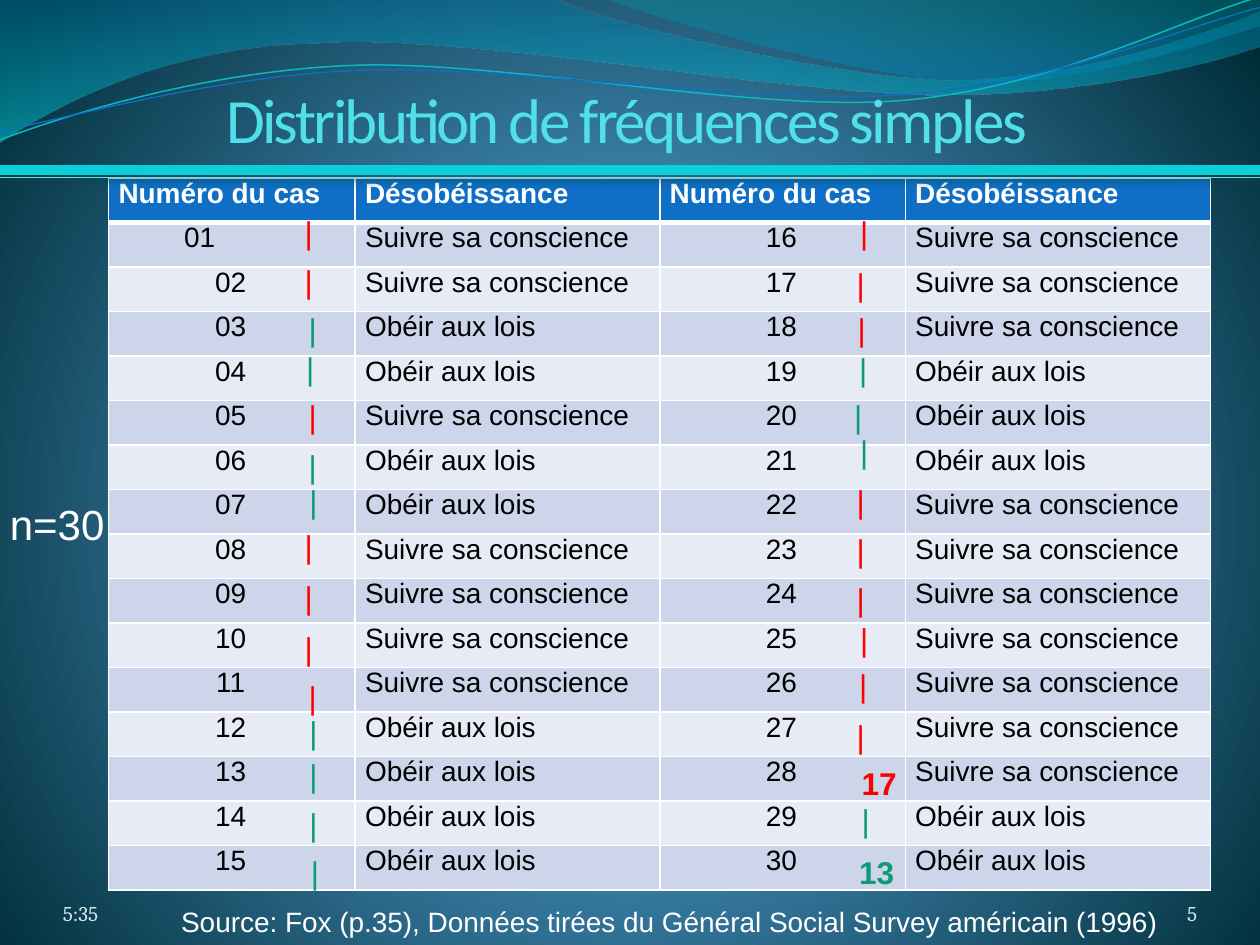
from math import cos, radians, sin
from typing import NamedTuple

from lxml.etree import SubElement
from pptx import Presentation
from pptx.dml.color import RGBColor
from pptx.enum.shapes import MSO_CONNECTOR
from pptx.enum.text import MSO_ANCHOR, MSO_AUTO_SIZE, PP_ALIGN
from pptx.oxml import parse_xml
from pptx.oxml.ns import nsdecls, qn
from pptx.util import Cm, Pt

WHITE = RGBColor(0xFF, 0xFF, 0xFF)
BLACK = RGBColor(0, 0, 0)
RED = RGBColor(0xFF, 0, 0)
GREEN = RGBColor(0x0C, 0x9B, 0x74)
BLUE = RGBColor(0x0F, 0x6F, 0xC6)
TEAL = RGBColor(0x0A, 0xB8, 0xBF)
CYAN = RGBColor(0x0B, 0xD0, 0xD9)
PALE_CYAN = RGBColor(0x77, 0xD9, 0xE8)
TITLE_CYAN = RGBColor(0x51, 0xE0, 0xEA)
FOOTER_GREY = RGBColor(0xD1, 0xEA, 0xEE)
SHADOW_TEAL = RGBColor(0x02, 0x4B, 0x4E)
DARK_BAND = RGBColor(0xCC, 0xD5, 0xEA)
LIGHT_BAND = RGBColor(0xE7, 0xEB, 0xF5)
STRAND_TILT = -2.7

Point = tuple[float, float]


class Answer(NamedTuple):
    text: str
    color: RGBColor


class Stop(NamedTuple):
    position: int
    color: str
    opacity: int = 100


class CaseColumn(NamedTuple):
    """Answers by case, with the left and top of each tally mark in cm."""
    first_case: int
    answers: str
    marks: list[Point]


ANSWERS = {"C": Answer("Suivre sa conscience", RED), "L": Answer("Obéir aux lois", GREEN)}
TOTALS = {28: "17", 30: "13"}
CASE_COLUMNS = [
    CaseColumn(1, "CCLLCLLCCCCLLLL", [
        (5.89, 4.17), (5.89, 5.16), (5.97, 6.12), (5.92, 6.91), (5.97, 7.87),
        (5.97, 8.89), (5.99, 9.6), (5.89, 10.49), (5.89, 11.53), (5.89, 12.55),
        (5.97, 13.54), (5.99, 14.25), (5.99, 15.11), (5.99, 16.1), (6.02, 17.07)]),
    CaseColumn(16, "CCCLLLCCCCCCCLL", [
        (17.09, 4.17), (17.02, 5.21), (17.04, 6.12), (17.07, 6.93), (16.97, 7.87),
        (17.09, 8.59), (17.02, 9.6), (17.02, 10.59), (17.02, 11.56), (17.09, 12.37),
        (17.07, 13.31), (17.02, 14.33), (17.12, 15.27), (17.12, 16.03), (17.07, 17.07)]),
]


def replace_gradient(fill, properties, stops: list[Stop], direction: str) -> None:
    fill.gradient()
    stop_xml = "".join(
        f'<a:gs pos="{stop.position * 1000}"><a:srgbClr val="{stop.color}">'
        f'<a:alpha val="{stop.opacity * 1000}"/></a:srgbClr></a:gs>' for stop in stops)
    properties.replace(properties.find(qn("a:gradFill")), parse_xml(
        f'<a:gradFill {nsdecls("a")} rotWithShape="1">'
        f'<a:gsLst>{stop_xml}</a:gsLst>{direction}</a:gradFill>'))


def draw_wave(page, segments: list[tuple[Point, ...]], closed: bool):
    """Draw an outline: a one-point segment is straight, a three-point one is curved."""
    corners = [(Cm(x), Cm(y)) for segment in segments for x, y in segment]
    builder = page.shapes.build_freeform(*corners[0], scale=1.0)
    builder.add_line_segments(corners[1:], close=closed)
    wave = builder.convert_to_shape()
    wave.shadow.inherit = False
    lines = iter(list(wave.element.iter(qn("a:lnTo"))))
    for segment in segments[1:]:
        steps = [next(lines) for _ in segment]
        if len(steps) == 3:
            curve = parse_xml(f'<a:cubicBezTo {nsdecls("a")}/>')
            steps[0].addprevious(curve)
            for step in steps:
                curve.append(step[0])
                step.getparent().remove(step)
    return wave


def draw_band(page, segments, stops: list[Stop]) -> None:
    band = draw_wave(page, segments, True)
    band.line.fill.background()
    replace_gradient(band.fill, band.element.spPr, stops, '<a:lin ang="5400000" scaled="0"/>')


def draw_strand(page, segments, center: Point, color: RGBColor, width: float) -> None:
    """Draw a tilted curve whose points are given as they lie after the tilt."""
    angle = radians(-STRAND_TILT)

    def level(point: Point) -> Point:
        across, down = point[0] - center[0], point[1] - center[1]
        return (center[0] + across * cos(angle) - down * sin(angle),
                center[1] + across * sin(angle) + down * cos(angle))

    strand = draw_wave(page, [tuple(map(level, segment)) for segment in segments], False)
    strand.rotation = STRAND_TILT
    strand.fill.background()
    strand.line.color.rgb = color
    strand.line.width = Pt(width)


def write(frame, text: str, *, size: float, color: RGBColor, font: str = "Arial",
          bold: bool = False, align=PP_ALIGN.LEFT, spacing: int = 0) -> None:
    para = frame.paragraphs[0]
    para.alignment = align
    span = para.add_run()
    span.text = text
    span.font.size, span.font.name, span.font.bold = Pt(size), font, bold
    span.font.color.rgb = color
    if spacing:
        span.font._element.set("spc", str(spacing))


def add_text(page, left: float, top: float, width: float, height: float, text: str,
             *, anchored_low: bool = False, **format) -> None:
    box = page.shapes.add_textbox(Cm(left), Cm(top), Cm(width), Cm(height))
    frame = box.text_frame
    frame.word_wrap = True
    if anchored_low:
        frame.vertical_anchor = MSO_ANCHOR.BOTTOM
        frame.margin_left = frame.margin_top = frame.margin_right = frame.margin_bottom = 0
    else:
        frame.auto_size = MSO_AUTO_SIZE.SHAPE_TO_FIT_TEXT
    write(frame, text, **format)


def fill_cell(cell, text: str, fill: RGBColor, *, bottom_border: float = 1,
              right_margin: float = 0.25, **format) -> None:
    cell.margin_left, cell.margin_right = Cm(0.2), Cm(right_margin)
    cell.margin_top = cell.margin_bottom = 0
    write(cell.text_frame, text, size=16, **format)
    properties = cell._tc.get_or_add_tcPr()
    for side, width in (("L", 1), ("R", 1), ("T", 1), ("B", bottom_border)):
        border = SubElement(properties, qn(f"a:ln{side}"), w=str(Pt(width)))
        SubElement(SubElement(border, qn("a:solidFill")), qn("a:srgbClr"), val=str(WHITE))
    cell.fill.solid()
    cell.fill.fore_color.rgb = fill


def add_case_table(page) -> None:
    table = page.shapes.add_table(16, 4, Cm(2.19), Cm(3.59), Cm(22.21), Cm(14.36)).table
    for column, width in zip(table.columns, (4.97, 6.14, 4.95, 6.15)):
        column.width = Cm(width)
    for row in table.rows:
        row.height = Cm(14.36 / 16)
    for pair, cases in enumerate(CASE_COLUMNS):
        for offset, heading in enumerate(("Numéro du cas", "Désobéissance")):
            fill_cell(table.cell(0, 2 * pair + offset), heading, BLUE,
                      bottom_border=3, color=WHITE, bold=True)
        for row, key in enumerate(cases.answers, 1):
            number = cases.first_case + row - 1
            band = DARK_BAND if row % 2 else LIGHT_BAND
            fill_cell(table.cell(row, 2 * pair), f"{number:02}", band, color=BLACK,
                      align=PP_ALIGN.CENTER, right_margin=1.5 if number == 1 else 0.25)
            fill_cell(table.cell(row, 2 * pair + 1), ANSWERS[key].text, band, color=BLACK)


def add_tally(page) -> None:
    for cases in CASE_COLUMNS:
        for number, (key, (left, top)) in enumerate(zip(cases.answers, cases.marks),
                                                    cases.first_case):
            add_text(page, left, top, 1.3, 1.02, TOTALS.get(number, "|"), size=18,
                     color=ANSWERS[key].color, bold=number in TOTALS)


def add_rule(page, top: float, color: RGBColor, width: float, shadowed: bool = False) -> None:
    rule = page.shapes.add_connector(MSO_CONNECTOR.STRAIGHT, 0, Cm(top), Cm(25.4), Cm(top))
    rule.line.color.rgb = color
    rule.line.width = Pt(width)
    effects = SubElement(rule._element.spPr, qn("a:effectLst"))
    if shadowed:
        shadow = SubElement(effects, qn("a:outerShdw"), blurRad=str(Pt(4.5)),
                            dist=str(Pt(3)), dir="5400000", rotWithShape="0")
        shade = SubElement(shadow, qn("a:srgbClr"), val=str(SHADOW_TEAL))
        SubElement(shade, qn("a:alpha"), val="48000")


def add_backdrop(page) -> None:
    replace_gradient(
        page.background.fill, page._element.cSld.find(qn("p:bg")).find(qn("p:bgPr")),
        [Stop(0, "4AA0D6"), Stop(25, "4C98C7"), Stop(100, "002C38")],
        '<a:path path="circle"><a:fillToRect l="10000" t="110000" r="10000" b="100000"/></a:path>')
    draw_band(page, [
        ((0, 0),), ((11.18, -0.03),), ((12.09, 0.43), (16.87, 1.6), (19.25, 1.6)),
        ((21.67, 1.6), (24.33, 0.66), (25.4, 0.23)), ((25.43, 0.91),),
        ((24.97, 1.12), (22.1, 1.93), (18.95, 1.91)), ((15.8, 1.91), (9.7, 0.71), (6.53, 0.86)),
        ((3.28, 0.91), (1.17, 2.11), (-0.03, 2.87))],
        [Stop(0, "0074A1", 45), Stop(100, "00C6CF", 55)])
    draw_band(page, [
        ((12.17, -0.03),), ((12.93, 0.28), (17.32, 1.57), (19.53, 1.65)),
        ((21.74, 1.75), (24.41, 0.81), (25.4, 0.53)), ((25.4, 0),)],
        [Stop(0, "00A1A9", 30), Stop(80, "008BBF", 45)])
    draw_strand(page, [
        ((0, 2.82),), ((1.22, 2.36), (4.01, 1.45), (7.04, 1.32)),
        ((10.03, 1.19), (15.06, 2.26), (18.11, 2.03)),
        ((21.16, 1.8), (23.83, 0.38), (25.35, -0.05))], (12.67, 1.46), TEAL, 0.85)
    draw_strand(page, [
        ((0, 2.64),), ((1.19, 2.44), (4.17, 1.55), (7.19, 1.42)),
        ((10.24, 1.3), (15.16, 2.13), (18.21, 1.91)),
        ((21.23, 1.7), (23.9, 0.53), (25.4, 0.15))], (12.69, 1.5), BLUE, 0.75)


def main() -> None:
    deck = Presentation()
    deck.slide_width, deck.slide_height = Cm(25.4), Cm(19.05)
    page = deck.slides.add_slide(deck.slide_layouts[6])
    add_backdrop(page)
    footer = dict(anchored_low=True, size=12, font="Cambria", color=FOOTER_GREY)
    add_text(page, 22.02, 17.65, 2.11, 1.02, "5", align=PP_ALIGN.RIGHT, **footer)
    add_text(page, 1.27, 17.65, 5.92, 1.02, "5:35", **footer)
    add_text(page, 0.05, 1.32, 25.4, 1.83, "Distribution de fréquences simples ",
             anchored_low=True, size=36, font="Calibri", color=TITLE_CYAN,
             align=PP_ALIGN.CENTER, spacing=-150)
    add_case_table(page)
    add_text(page, 2.98, 18.11, 21.03, 0.94,
             "Source: Fox (p.35), Données tirées du Général Social Survey américain (1996)",
             size=16, color=WHITE, align=PP_ALIGN.CENTER)
    add_tally(page)
    add_rule(page, 3.43, CYAN, 6, shadowed=True)
    add_rule(page, 3.58, PALE_CYAN, 0.75)
    add_text(page, -0.05, 9.92, 2.64, 1.27, "n=30", size=24, color=WHITE)
    deck.save("out.pptx")


if __name__ == "__main__":
    main()
